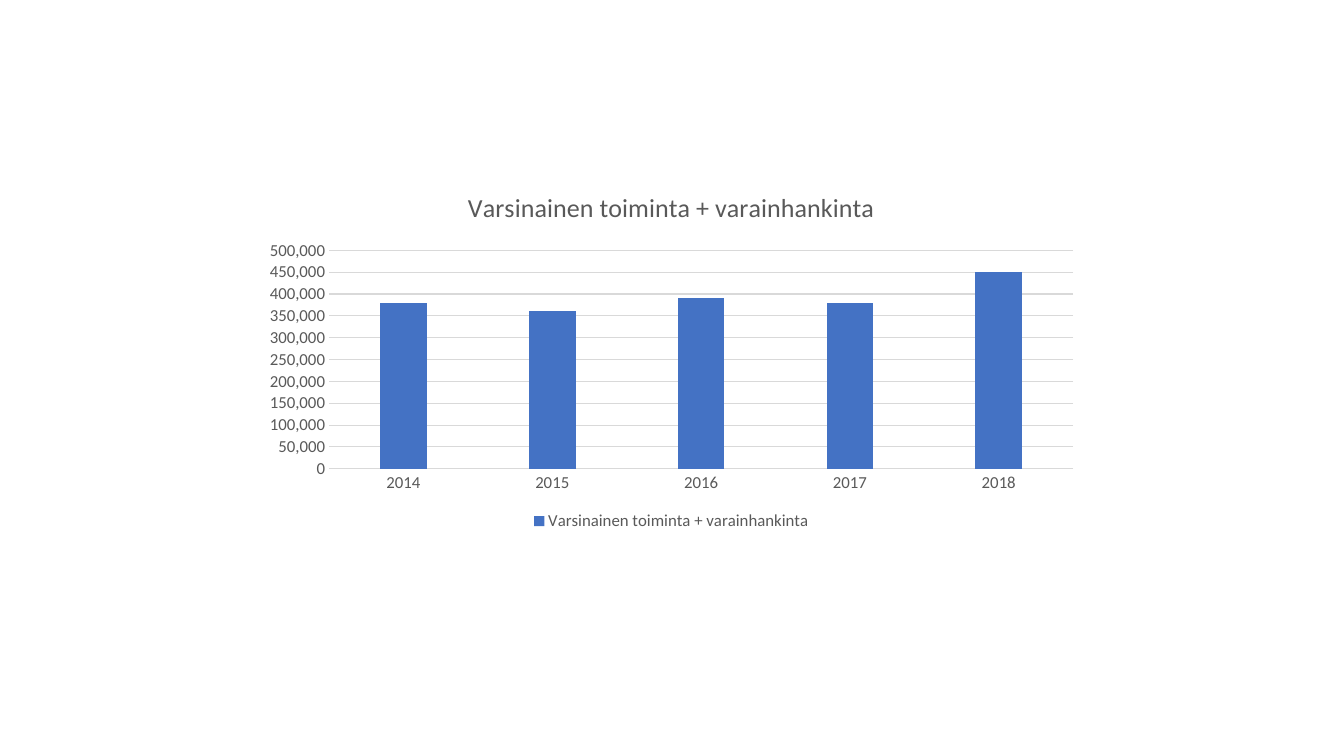
from pptx import Presentation
from pptx.chart.data import CategoryChartData
from pptx.dml.color import RGBColor
from pptx.enum.chart import XL_CHART_TYPE, XL_LEGEND_POSITION, XL_TICK_MARK
from pptx.util import Inches, Pt

TITLE = "Varsinainen toiminta + varainhankinta"
AMOUNTS = {
    "2014": 380000,
    "2015": 360000,
    "2016": 390000,
    "2017": 380000,
    "2018": 450000,
}
FONT = "Calibri"
BLUE = RGBColor(0x44, 0x72, 0xC4)
TEXT_GREY = RGBColor(0x59, 0x59, 0x59)
LINE_GREY = RGBColor(0xD9, 0xD9, 0xD9)


def style_font(font, size):
    font.name = FONT
    font.size = Pt(size)
    font.bold = False
    font.color.rgb = TEXT_GREY


def style_line(line):
    line.color.rgb = LINE_GREY
    line.width = Pt(0.75)


presentation = Presentation()
presentation.slide_width = Inches(13.33)
presentation.slide_height = Inches(7.5)
slide = presentation.slides.add_slide(presentation.slide_layouts[6])

chart_data = CategoryChartData(number_format="#,##0")
chart_data.categories = list(AMOUNTS)
chart_data.add_series(TITLE, list(AMOUNTS.values()))
chart = slide.shapes.add_chart(
    XL_CHART_TYPE.COLUMN_CLUSTERED,
    Inches(2.51), Inches(1.71), Inches(8.3), Inches(3.6), chart_data,
).chart
chart.font.name = FONT
chart.font.size = Pt(10)

chart.has_title = True
title_frame = chart.chart_title.text_frame
title_frame.text = TITLE
style_font(title_frame.paragraphs[0].font, 18.6)
chart.chart_title.include_in_layout = False

chart.has_legend = True
chart.legend.position = XL_LEGEND_POSITION.BOTTOM
chart.legend.include_in_layout = False
style_font(chart.legend.font, 12)

plot = chart.plots[0]
plot.gap_width = 219
plot.overlap = -27
plot.vary_by_categories = False
columns = plot.series[0]
columns.format.fill.solid()
columns.format.fill.fore_color.rgb = BLUE

for axis in (chart.category_axis, chart.value_axis):
    axis.major_tick_mark = XL_TICK_MARK.NONE
    axis.minor_tick_mark = XL_TICK_MARK.NONE
    style_font(axis.tick_labels.font, 12)
style_line(chart.category_axis.format.line)

value_axis = chart.value_axis
value_axis.minimum_scale = 0
value_axis.maximum_scale = 500000
value_axis.major_unit = 50000
value_axis.tick_labels.number_format = "#,##0"
value_axis.tick_labels.number_format_is_linked = False
value_axis.format.line.fill.background()
value_axis.has_major_gridlines = True
style_line(value_axis.major_gridlines.format.line)

presentation.save("out.pptx")
